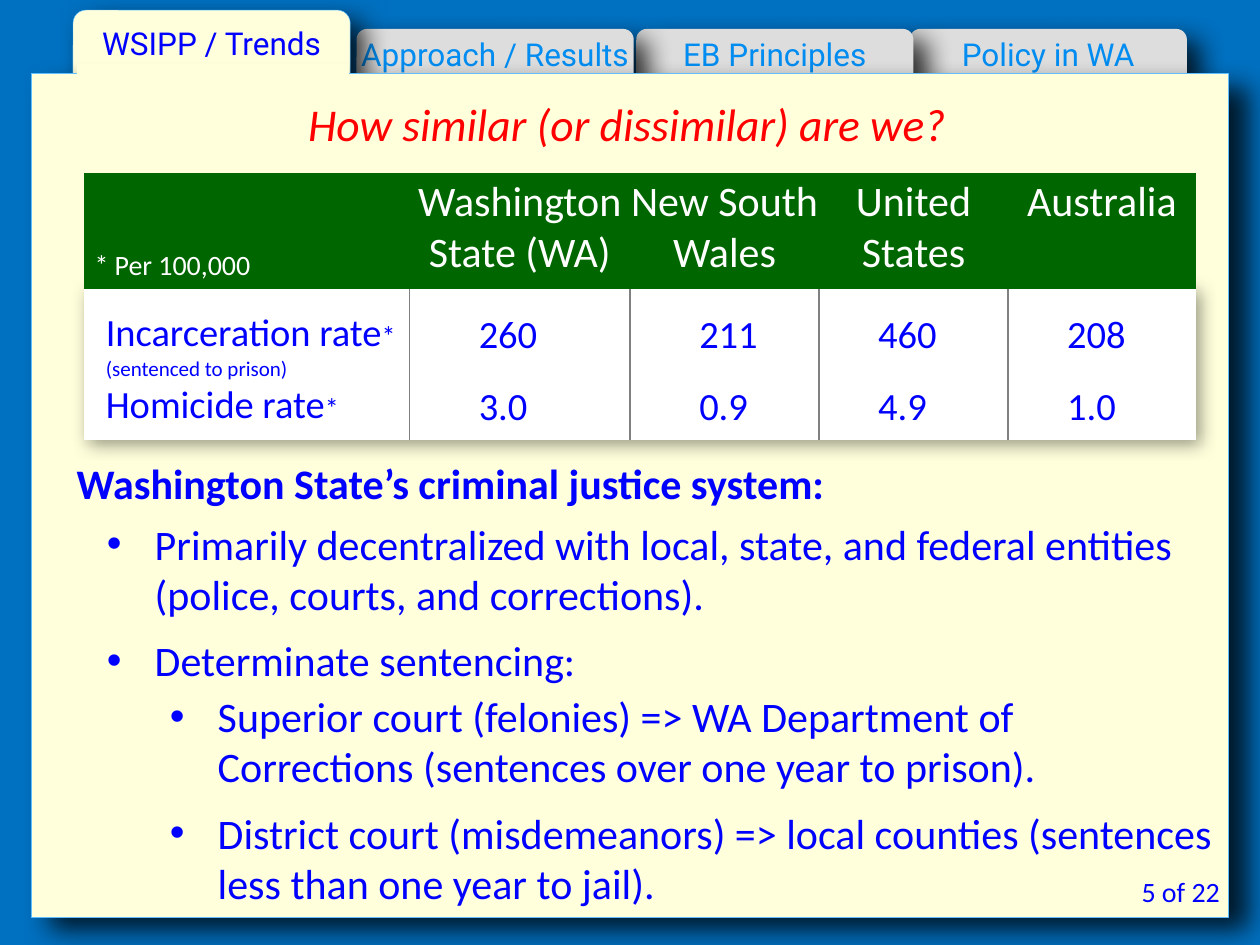
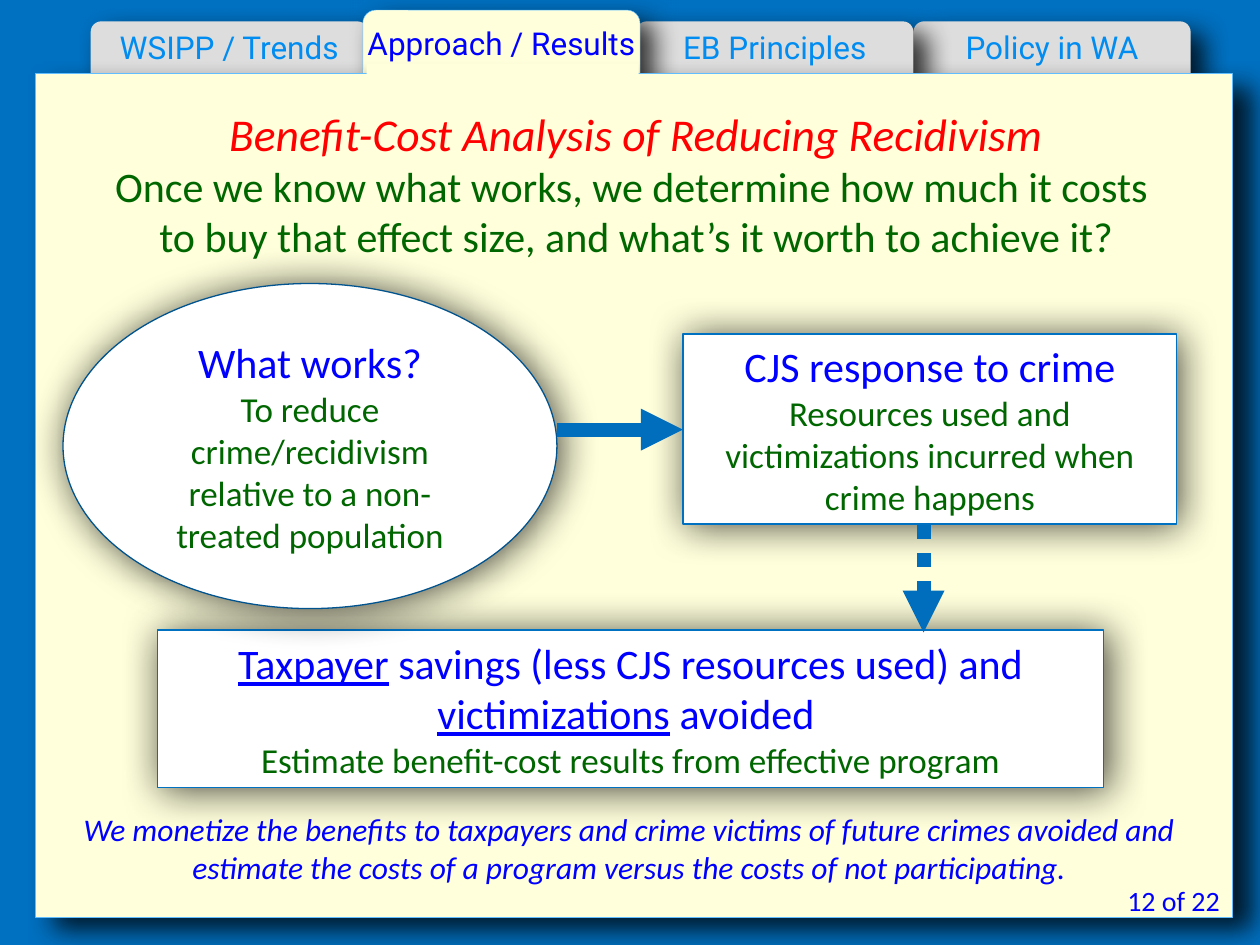
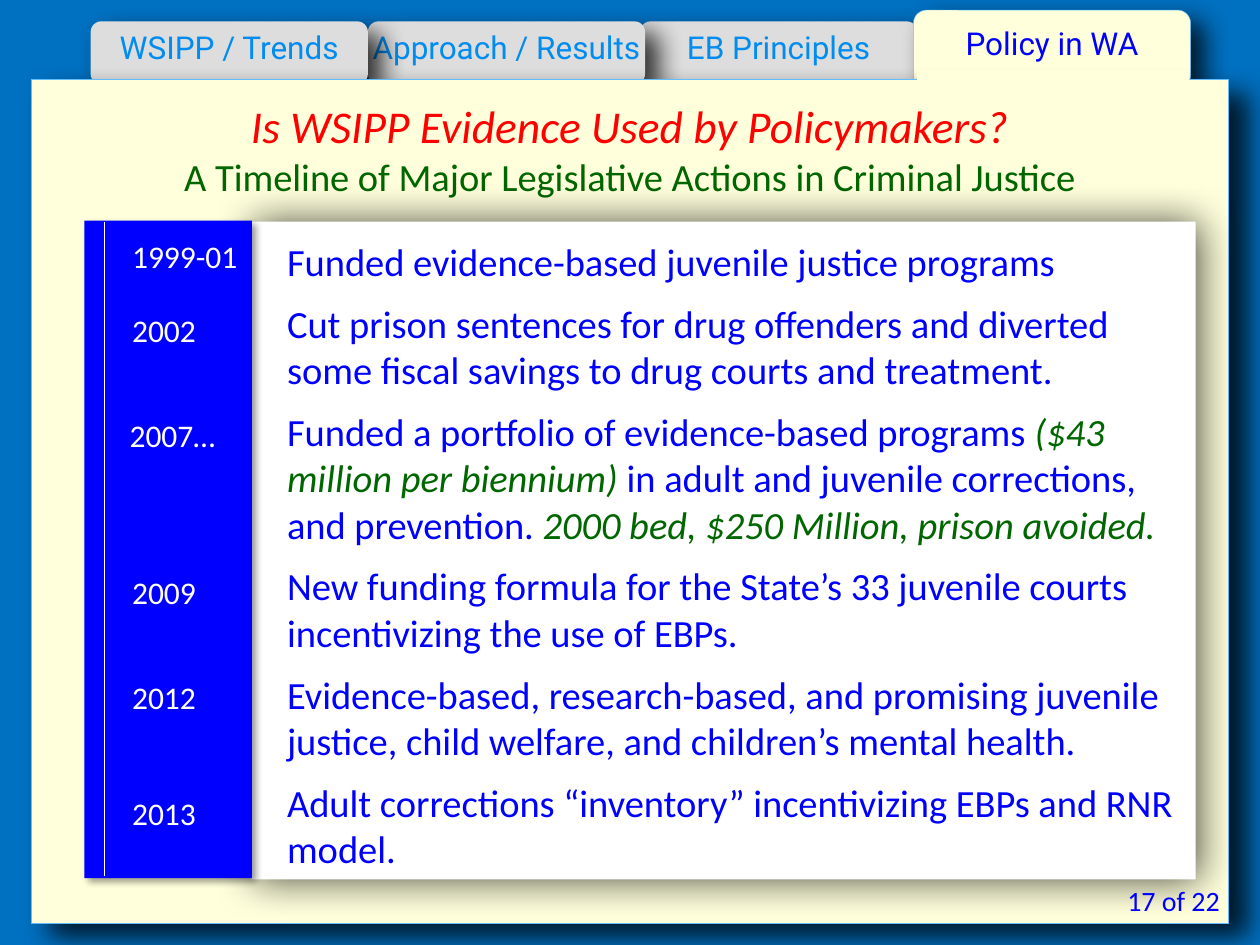
from dataclasses import dataclass

from lxml.etree import SubElement
from pptx import Presentation
from pptx.dml.color import RGBColor
from pptx.enum.dml import MSO_LINE
from pptx.enum.shapes import MSO_CONNECTOR, MSO_SHAPE
from pptx.enum.text import MSO_ANCHOR, MSO_AUTO_SIZE, PP_ALIGN
from pptx.oxml.ns import qn
from pptx.util import Inches, Pt

SKY = RGBColor(0x00, 0x70, 0xC0)
CREAM = RGBColor(0xFF, 0xFF, 0xDC)
TAB_GRAY = RGBColor(0xDD, 0xDD, 0xDD)
TAB_TEXT = RGBColor(0x00, 0x8C, 0xF0)
TAB_EDGE = RGBColor(0x60, 0xBD, 0xFF)
BLUE = RGBColor(0x00, 0x00, 0xFF)
RED = RGBColor(0xFF, 0x00, 0x00)
GREEN = RGBColor(0x00, 0x66, 0x00)
WHITE = RGBColor(0xFF, 0xFF, 0xFF)
RULE_GRAY = RGBColor(0x80, 0x80, 0x80)
ARROW_BLUE = RGBColor(0x00, 0x6E, 0xBC)
ELLIPSE_EDGE = RGBColor(0x00, 0x53, 0x8E)

BODY_FONT = "Calibri"
TAB_FONT = "Roboto"

# Shadows: opacity in percent, blur and distance in points, angle in degrees
TAB_SHADOW = (79, 15, 10, 40)
PANEL_SHADOW = (79, 15, 14, 36)
CARD_SHADOW = (71, 23, 2, 20)
TABLE_SHADOW = (40, 10, 3, 45)
BAND_SHADOW = (40, 4, 3, 45)

TAB_LABELS = ("WSIPP / Trends", "Approach / Results", "EB Principles", "Policy in WA")
TAB_WIDTH = 2.2
DEFAULT_INSETS = (0.1, 0.05, 0.1, 0.05)


@dataclass
class Run:
    text: str
    size: float
    color: RGBColor = BLUE
    font: str = BODY_FONT
    bold: bool = False
    italic: bool = False
    underline: bool = False


@dataclass
class Para:
    runs: list
    align: PP_ALIGN = PP_ALIGN.LEFT
    after: float = 0
    indent: float = 0
    hanging: float = 0
    level: int = 0


def line(text, size, color=BLUE, align=PP_ALIGN.LEFT, **style):
    """A paragraph made of a single run."""
    return Para([Run(text, size, color, **style)], align)


def centered(text, size, color=BLUE, **style):
    return line(text, size, color, PP_ALIGN.CENTER, **style)


def bullet(text, level):
    return Para([Run(text, 24)], after=9, indent=0.38 + 0.5 * level,
                hanging=0.38, level=level)


def write(frame, paras):
    for index, para in enumerate(paras):
        target = frame.paragraphs[0] if index == 0 else frame.add_paragraph()
        target.alignment = para.align
        target.level = para.level
        target.space_before = Pt(0)
        target.space_after = Pt(para.after)
        props = target._p.get_or_add_pPr()
        props.set("marL", str(Inches(para.indent)))
        props.set("indent", str(-Inches(para.hanging)))
        if para.hanging:
            SubElement(props, qn("a:buFont"), typeface="Arial")
            SubElement(props, qn("a:buChar"), char="•")
        for piece in para.runs:
            run = target.add_run()
            run.text = piece.text
            run.font.name = piece.font
            run.font.size = Pt(piece.size)
            run.font.color.rgb = piece.color
            run.font.bold = piece.bold
            run.font.italic = piece.italic
            run.font.underline = piece.underline


def set_insets(frame, insets):
    frame.margin_left, frame.margin_top, frame.margin_right, frame.margin_bottom = (
        Inches(inset) for inset in insets)


class Deck:
    def __init__(self):
        self.prs = Presentation()
        self.prs.slide_width, self.prs.slide_height = Inches(10), Inches(7.5)
        backdrop = self.prs.slide_master.background.fill
        backdrop.solid()
        backdrop.fore_color.rgb = SKY
        self.slide = None

    def new_slide(self, active, tab_lefts, tab_top, panel_left, panel_top):
        """Start a slide: four folder tabs, the active one joined to the panel."""
        self.slide = self.prs.slides.add_slide(self.prs.slide_layouts[5])
        for index in reversed(range(len(TAB_LABELS))):
            if index != active:
                self.tab(TAB_LABELS[index], (tab_lefts[index], tab_top, TAB_WIDTH, 0.5),
                         TAB_GRAY, TAB_TEXT)
        left = tab_lefts[active]
        self.tab(TAB_LABELS[active], (left, 0.08, TAB_WIDTH, 0.62), CREAM, BLUE, TAB_EDGE)
        self.shape(MSO_SHAPE.RECTANGLE, (panel_left, panel_top, 9.5, 6.7), CREAM,
                   edge=TAB_EDGE, edge_width=0.05, shadow=PANEL_SHADOW)
        self.shape(MSO_SHAPE.RECTANGLE, (left + 0.03, panel_top - 0.07, 2.16, 0.14), CREAM)

    def tab(self, label, box, fill, color, edge=None):
        self.shape(MSO_SHAPE.ROUNDED_RECTANGLE, box, fill, edge=edge, edge_width=0.25,
                   shadow=TAB_SHADOW, insets=(0, 0, 0, 0.1),
                   paras=[centered(label, 18, color, font=TAB_FONT)])

    def shape(self, kind, box, fill, edge=None, edge_width=0.75, shadow=None,
              paras=(), insets=DEFAULT_INSETS):
        shape = self.slide.shapes.add_shape(kind, *map(Inches, box))
        shape.fill.solid()
        shape.fill.fore_color.rgb = fill
        if edge is None:
            shape.line.fill.background()
        else:
            shape.line.color.rgb = edge
            shape.line.width = Pt(edge_width)
        shape.shadow.inherit = False
        if shadow:
            opacity, blur, distance, angle = shadow
            effects = shape.element.spPr.find(qn("a:effectLst"))
            outer = SubElement(effects, qn("a:outerShdw"), blurRad=str(Pt(blur)),
                               dist=str(Pt(distance)), dir=str(angle * 60000),
                               algn="tl", rotWithShape="0")
            tint = SubElement(outer, qn("a:srgbClr"), val="000000")
            SubElement(tint, qn("a:alpha"), val=str(opacity * 1000))
        frame = shape.text_frame
        frame.vertical_anchor = MSO_ANCHOR.MIDDLE
        set_insets(frame, insets)
        write(frame, paras)

    def title(self, box, paras, insets=DEFAULT_INSETS):
        title = self.slide.shapes.title
        title.left, title.top, title.width, title.height = map(Inches, box)
        title.element.getparent().append(title.element)  # in front of the panel
        frame = title.text_frame
        frame.word_wrap = True
        frame.auto_size = MSO_AUTO_SIZE.NONE
        frame.vertical_anchor = MSO_ANCHOR.TOP
        set_insets(frame, insets)
        write(frame, paras)

    def text(self, box, paras, wrap=True):
        frame = self.slide.shapes.add_textbox(*map(Inches, box)).text_frame
        frame.word_wrap = wrap
        write(frame, paras)

    def page_number(self, number, top=6.96):
        self.text((8.42, top, 1.36, 0.37),
                  [line(f"{number} of 22", 16, align=PP_ALIGN.RIGHT)])

    def connector(self, start, end, color, width, dash=None, arrow=False):
        link = self.slide.shapes.add_connector(
            MSO_CONNECTOR.STRAIGHT, *map(Inches, (*start, *end)))
        link.line.color.rgb = color
        link.line.width = Pt(width)
        if dash:
            link.line.dash_style = dash
        props = link.element.spPr
        if arrow:
            SubElement(props.find(qn("a:ln")), qn("a:tailEnd"), type="triangle")
        SubElement(props, qn("a:effectLst"))

    def table(self, left, top, widths, heights):
        size = Inches(sum(widths)), Inches(sum(heights))
        table = self.slide.shapes.add_table(
            len(heights), len(widths), Inches(left), Inches(top), *size).table
        table.first_row = table.horz_banding = False
        for column, width in zip(table.columns, widths):
            column.width = Inches(width)
        for row, height in zip(table.rows, heights):
            row.height = Inches(height)
        return table

    def cell(self, cell, paras, fill, insets, ruled_sides=(), anchor=MSO_ANCHOR.TOP):
        props = cell._tc.get_or_add_tcPr()
        for side in ("lnL", "lnR", "lnT", "lnB"):
            border = SubElement(props, qn(f"a:{side}"), w=str(Pt(1.25)))
            if side in ruled_sides:
                paint = SubElement(border, qn("a:solidFill"))
                SubElement(paint, qn("a:srgbClr"), val=str(RULE_GRAY))
            else:
                SubElement(border, qn("a:noFill"))
        cell.fill.solid()
        cell.fill.fore_color.rgb = fill
        cell.vertical_anchor = anchor
        set_insets(cell, insets)
        write(cell.text_frame, paras)


def comparison_table(deck):
    places = (["Washington", "State (WA)"], ["New South", "Wales"],
              ["United", "States"], ["Australia"])
    measures = (
        ([Para([Run("Incarceration rate", 22), Run("*", 16)]),
          line("(sentenced to prison)", 12)], ("260", "211", "460", "208")),
        ([Para([Run("Homicide rate", 22), Run("*", 16)])], ("3.0", "0.9", "4.9", "1.0")),
    )
    value_insets = (0.55, 0.55, 0.47, 0.47)
    top_insets = (0.17, 0)

    deck.shape(MSO_SHAPE.RECTANGLE, (0.67, 2.28, 8.82, 1.21), WHITE, shadow=TABLE_SHADOW)
    table = deck.table(0.67, 1.37, (2.58, 1.75, 1.5, 1.5, 1.49), (0.92, 0.74, 0.46))
    deck.cell(table.cell(0, 0), [line("* Per 100,000", 16, WHITE)], GREEN,
              (0.08, 0, 0, 0.04), anchor=MSO_ANCHOR.BOTTOM)
    for column, words in enumerate(places, start=1):
        deck.cell(table.cell(0, column), [centered(word, 24, WHITE) for word in words],
                  GREEN, (0, 0.03, 0, 0))
    for row, (heading, values) in enumerate(measures, start=1):
        top = top_insets[row - 1]
        deck.cell(table.cell(row, 0), heading, WHITE, (0.17, top, 0, 0), ("lnR",))
        for column, value in enumerate(values, start=1):
            sides = ("lnL", "lnR") if column < len(values) else ("lnL",)
            deck.cell(table.cell(row, column), [line(value, 22)], WHITE,
                      (value_insets[column - 1], top + 0.02, 0, 0), sides)


def trends_slide(deck):
    deck.new_slide(0, (0.58, 2.83, 5.05, 7.22), 0.23, 0.25, 0.58)
    deck.page_number(5, top=6.89)
    deck.title((-0.02, 0.71, 10, 0.54),
               [centered("How similar (or dissimilar) are we?", 26, RED, italic=True)])
    heading = Para([Run("Washington State’s criminal justice system:", 24, bold=True)],
                   after=6, indent=0.26)
    sentencing = bullet("Determinate sentencing:", 1)
    sentencing.after = 3
    deck.text((0.25, 3.58, 9.5, 3.71), [
        heading,
        bullet("Primarily decentralized with local, state, and federal entities "
               "(police, courts, and corrections).", 1),
        sentencing,
        bullet("Superior court (felonies) => WA Department of Corrections "
               "(sentences over one year to prison).", 2),
        bullet("District court (misdemeanors) => local counties "
               "(sentences less than one year to jail).", 2),
    ])
    comparison_table(deck)


def benefit_cost_slide(deck):
    deck.new_slide(1, (0.72, 2.88, 5.05, 7.25), 0.17, 0.28, 0.58)
    deck.title((0.33, 0.79, 9.44, 1.35), [
        centered("Benefit-Cost Analysis of Reducing Recidivism", 26, RED, italic=True),
        centered("Once we know what works, we determine how much it costs ", 24, GREEN),
        centered("to buy that effect size, and what’s it worth to achieve it?", 24, GREEN),
    ])
    deck.text((0.33, 6.38, 9.33, 0.71), [centered(
        "We monetize the benefits to taxpayers and crime victims of future crimes avoided "
        "and estimate the costs of a program versus the costs of not participating.",
        18, italic=True)])
    deck.page_number(12)

    savings = Para([Run("Taxpayer", 24, underline=True),
                    Run(" savings (less CJS resources used) and ", 24),
                    Run("victimizations", 24, underline=True),
                    Run(" avoided ", 24)], PP_ALIGN.CENTER)
    steps = (
        (MSO_SHAPE.RECTANGLE, (5.42, 2.65, 3.92, 1.51), SKY,
         centered("CJS response to crime", 24),
         "Resources used and victimizations incurred when crime happens"),
        (MSO_SHAPE.RECTANGLE, (1.25, 5, 7.51, 1.25), SKY, savings,
         "Estimate benefit-cost results from effective program"),
        (MSO_SHAPE.OVAL, (0.5, 2.25, 3.92, 2.58), ELLIPSE_EDGE,
         centered("What works?", 24),
         "To reduce crime/recidivism relative to a non-treated population"),
    )
    for kind, box, edge, heading, detail in steps:
        deck.shape(kind, box, WHITE, edge=edge, shadow=CARD_SHADOW,
                   paras=[heading, centered(detail, 20, GREEN)])
    deck.connector((4.42, 3.41), (5.42, 3.41), ARROW_BLUE, 8, arrow=True)
    deck.connector((7.33, 4.17), (7.33, 5.02), ARROW_BLUE, 8,
                   dash=MSO_LINE.ROUND_DOT, arrow=True)


def timeline_slide(deck):
    deck.new_slide(3, (0.72, 2.92, 5.08, 7.25), 0.17, 0.25, 0.63)
    deck.title((0.25, 0.78, 9.5, 0.81), [
        centered("Is WSIPP Evidence Used by Policymakers?", 26, RED, italic=True),
        centered("A Timeline of Major Legislative Actions in Criminal Justice", 22, GREEN),
    ], insets=(0, 0, 0, 0))
    deck.shape(MSO_SHAPE.RECTANGLE, (1.99, 1.76, 7.5, 5.22), WHITE, shadow=CARD_SHADOW)

    actions = (
        [Run("Funded evidence-based juvenile justice programs", 22)],
        [Run("Cut prison sentences for drug offenders and diverted some fiscal savings "
             "to drug courts and treatment.", 22)],
        [Run("Funded a portfolio of evidence-based programs ", 22),
         Run("($43 million per biennium)", 22, GREEN, italic=True),
         Run(" in adult and juvenile corrections, and prevention. ", 22),
         Run("2000 bed, $250 Million, prison avoided.", 22, GREEN, italic=True)],
        [Run("New funding formula for the State’s 33 juvenile courts incentivizing "
             "the use of EBPs.", 22)],
        [Run("Evidence-based, research-based, and promising juvenile justice, "
             "child welfare, and children’s mental health.", 22)],
        [Run("Adult corrections “inventory” incentivizing EBPs and RNR model.", 22)],
    )
    deck.text((2, 1.84, 7.49, 5.18),
              [Para(runs, after=9, indent=0.18) for runs in actions])
    deck.page_number(17)

    deck.shape(MSO_SHAPE.RECTANGLE, (0.67, 1.75, 1.33, 5.22), BLUE, shadow=BAND_SHADOW)
    deck.connector((0.83, 1.76), (0.83, 6.95), WHITE, 0.75)
    years = (("1999-01", 0.95, 1.83), ("2002", 0.95, 2.42), ("2007…", 0.93, 3.25),
             ("2009", 0.95, 4.5), ("2012", 0.95, 5.33), ("2013", 0.95, 6.25))
    for year, left, top in years:
        deck.text((left, top, 1.05, 0.4), [line(year, 18, WHITE)], wrap=False)


def main():
    deck = Deck()
    trends_slide(deck)
    benefit_cost_slide(deck)
    timeline_slide(deck)
    deck.prs.save("out.pptx")


if __name__ == "__main__":
    main()
